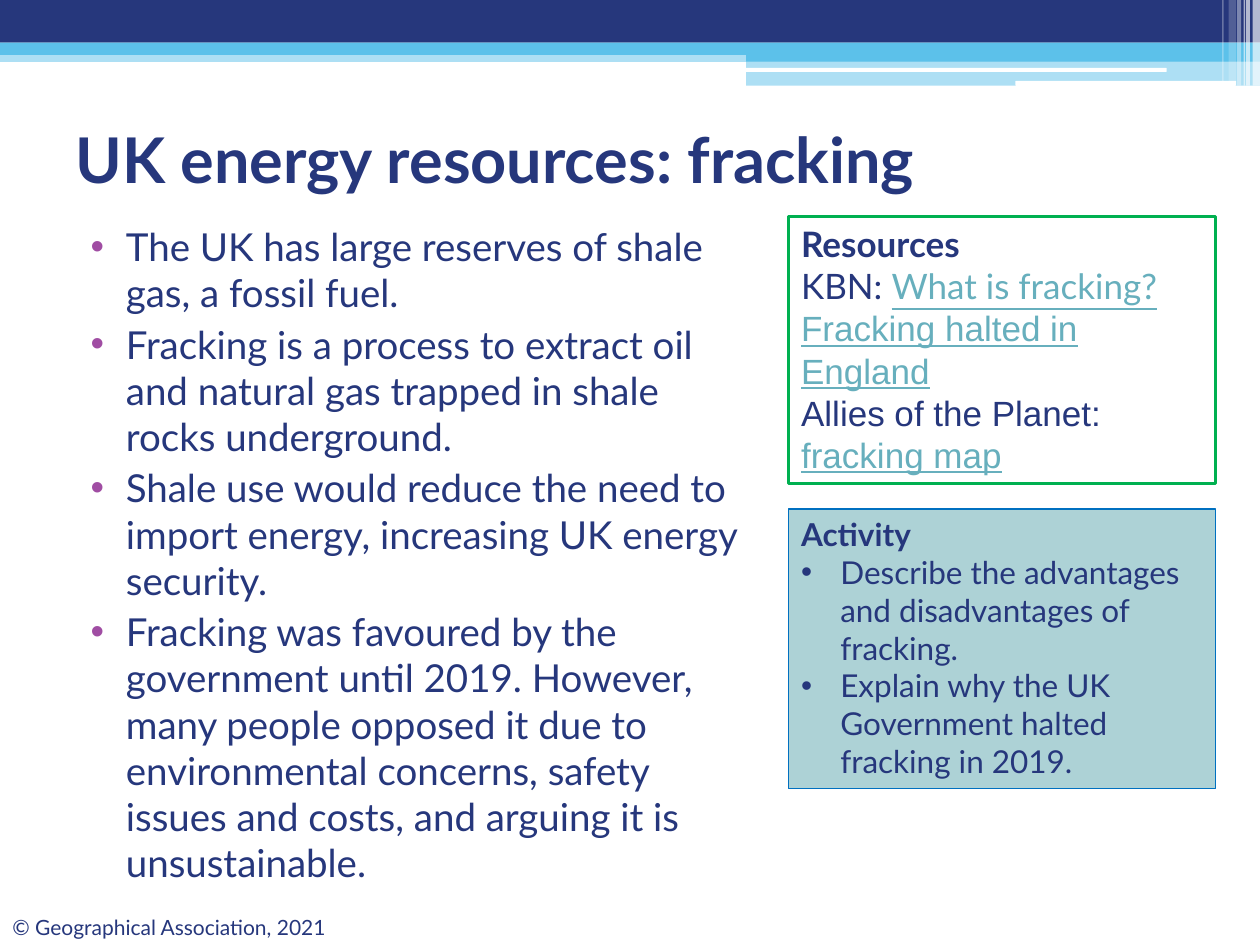
"""Build the slide on fracking as a UK energy resource."""
from dataclasses import dataclass
from typing import NamedTuple, Optional

from lxml import etree
from pptx import Presentation
from pptx.dml.color import RGBColor
from pptx.enum.shapes import MSO_SHAPE
from pptx.enum.text import MSO_ANCHOR, PP_ALIGN
from pptx.oxml.ns import qn
from pptx.util import Cm, Pt

RECTANGLE = MSO_SHAPE.RECTANGLE
ROUNDED = MSO_SHAPE.ROUNDED_RECTANGLE
TOP, MIDDLE = MSO_ANCHOR.TOP, MSO_ANCHOR.MIDDLE
LEFT = PP_ALIGN.LEFT


@dataclass(frozen=True)
class Theme:
    """Colours, fonts and type sizes of the slide."""
    navy: str = "26377C"
    sky: str = "5CC1EA"
    white: str = "FFFFFF"
    purple: str = "A04DA3"
    link: str = "67AFBD"
    activity_fill: str = "ADD2D6"
    activity_line: str = "0070C0"
    resources_line: str = "00B050"
    main_font: str = "Lato"
    link_font: str = "Arial"
    title_size: int = 36
    body_size: int = 22
    resources_size: int = 20
    activity_size: int = 18
    footer_size: int = 12


THEME = Theme()


class Area(NamedTuple):
    """Left, top, width and height in centimetres."""
    left: float
    top: float
    width: float
    height: float


class Band(NamedTuple):
    """A plain filled strip of the header."""
    area: Area
    colour: str
    opacity: int = 100
    preset: MSO_SHAPE = RECTANGLE


class Bullet(NamedTuple):
    """Indents in centimetres and colour of a bulleted paragraph."""
    margin: float
    hanging: float
    colour: str


class Line(NamedTuple):
    """A paragraph: plain words followed by optional linked words."""
    words: str
    linked: str = ""
    family: str = THEME.main_font
    bold: bool = False
    bullet: Optional[Bullet] = None
    space_before: float = 0


STRIPES = [(25.25, 0.15, 1.73, 65), (25.12, 0.08, 1.73, 65),
           (25.07, 0.03, 1.73, 60), (24.94, 0.08, 1.73, 40),
           (24.77, 0.15, 1.63, 20), (24.64, 0.03, 1.63, 30)]
HEADER = [
    Band(Area(0, 1.02, 25.4, 0.23), THEME.sky, 50),
    Band(Area(0, 0, 25.4, 0.86), THEME.navy),
    Band(Area(0, 0.86, 25.4, 0.25), THEME.sky),
    Band(Area(15.04, 0.99, 10.36, 0.25), THEME.sky),
    Band(Area(15.04, 1.22, 10.36, 0.51), THEME.sky, 50),
    Band(Area(15.01, 1.37, 8.51, 0.08), THEME.white, preset=ROUNDED),
    Band(Area(20.47, 1.63, 4.45, 0.1), THEME.white, preset=ROUNDED),
    *(Band(Area(left, 0, width, height), THEME.white, opacity)
      for left, width, height, opacity in STRIPES),
]

FACTS = [
    "The UK has large reserves of shale gas, a fossil fuel.",
    "Fracking is a process to extract oil and natural gas trapped in shale "
    "rocks underground.",
    "Shale use would reduce the need to import energy, increasing UK energy "
    "security.",
    "Fracking was favoured by the government until 2019. However, many people "
    "opposed it due to environmental concerns, safety issues and costs, and "
    "arguing it is unsustainable.",
]
FACT_BULLET = Bullet(1.02, 0.71, THEME.purple)
TASK_BULLET = Bullet(0.79, 0.79, THEME.navy)
TASKS = ["Describe the advantages and disadvantages of fracking.",
         "Explain why the UK Government halted fracking in 2019."]
RESOURCES = [
    Line("Resources", bold=True),
    Line("KBN: ", "What is fracking?"),
    Line("", "Fracking halted in England", THEME.link_font),
    Line("Allies of the Planet: ", "fracking map", THEME.link_font),
]


def draw_band(slide, band: Band) -> None:
    """Draw one header strip with its opacity."""
    strip = slide.shapes.add_shape(band.preset, *map(Cm, band.area))
    strip.shadow.inherit = False
    strip.line.fill.background()
    strip.fill.solid()
    strip.fill.fore_color.rgb = RGBColor.from_string(band.colour)
    if band.opacity < 100:
        colour = strip._element.spPr.find(qn("a:solidFill"))[0]
        etree.SubElement(colour, qn("a:alpha"), val=str(band.opacity * 1000))


def add_bullet(paragraph, bullet: Bullet) -> None:
    """Give a paragraph a hanging round bullet."""
    properties = paragraph._p.get_or_add_pPr()
    properties.set("marL", str(Cm(bullet.margin)))
    properties.set("indent", str(-Cm(bullet.hanging)))
    colour = etree.SubElement(properties, qn("a:buClr"))
    etree.SubElement(colour, qn("a:srgbClr"), val=bullet.colour)
    etree.SubElement(properties, qn("a:buFont"), typeface=THEME.link_font)
    etree.SubElement(properties, qn("a:buChar"), char="•")


def style_font(font, line: Line, size: int, is_link: bool) -> None:
    """Set family, size, weight, colour and underline."""
    font.name = line.family
    font.size = Pt(size)
    font.bold = line.bold
    font.underline = is_link
    font.color.rgb = RGBColor.from_string(THEME.link if is_link else THEME.navy)


def write_lines(frame, lines: list[Line], size: int, anchor=TOP) -> None:
    """Fill a text frame with styled paragraphs."""
    frame.word_wrap = True
    frame.vertical_anchor = anchor
    for index, line in enumerate(lines):
        paragraph = frame.add_paragraph() if index else frame.paragraphs[0]
        if line.bullet:
            add_bullet(paragraph, line.bullet)
        paragraph.alignment = LEFT
        if index and line.space_before:
            paragraph.space_before = Pt(line.space_before)
        parts = [(words, is_link) for words, is_link
                 in ((line.words, False), (line.linked, True)) if words]
        for words, is_link in parts:
            run = paragraph.add_run()
            run.text = words
            target = run if len(parts) > 1 else paragraph
            style_font(target.font, line, size, is_link)


def draw_text(slide, area: Area, lines: list[Line], size: int, anchor=TOP) -> None:
    """Draw an unframed block of text."""
    block = slide.shapes.add_textbox(*map(Cm, area))
    write_lines(block.text_frame, lines, size, anchor)


def draw_panel(slide, area: Area, lines: list[Line], size: int, outline: str,
               weight: float, fill: Optional[str] = None) -> None:
    """Draw a framed panel of text."""
    panel = slide.shapes.add_shape(RECTANGLE, *map(Cm, area))
    panel.shadow.inherit = False
    if fill:
        panel.fill.solid()
        panel.fill.fore_color.rgb = RGBColor.from_string(fill)
    else:
        panel.fill.background()
    panel.line.color.rgb = RGBColor.from_string(outline)
    panel.line.width = Pt(weight)
    write_lines(panel.text_frame, lines, size)


def main() -> None:
    """Assemble and save the slide."""
    deck = Presentation()
    deck.slide_width, deck.slide_height = Cm(25.4), Cm(19.05)
    slide = deck.slides.add_slide(deck.slide_layouts[6])
    for band in HEADER:
        draw_band(slide, band)
    draw_text(slide, Area(0, 18.31, 7.29, 0.76),
              [Line("© Geographical Association, 2021")], THEME.footer_size)
    draw_text(slide, Area(1.27, 1.7, 22.86, 2.97),
              [Line("UK energy resources: fracking", bold=True)],
              THEME.title_size, MIDDLE)
    draw_text(slide, Area(1.27, 4.37, 14.2, 13.74),
              [Line(fact, bullet=FACT_BULLET, space_before=3) for fact in FACTS],
              THEME.body_size)
    activity = [Line("Activity", bold=True),
                *(Line(task, bullet=TASK_BULLET) for task in TASKS)]
    draw_panel(slide, Area(15.9, 10.26, 8.61, 5.64), activity, THEME.activity_size,
               THEME.activity_line, 0.75, THEME.activity_fill)
    draw_panel(slide, Area(15.9, 4.37, 8.61, 5.38), RESOURCES, THEME.resources_size,
               THEME.resources_line, 1.5)
    deck.save("out.pptx")


if __name__ == "__main__":
    main()
